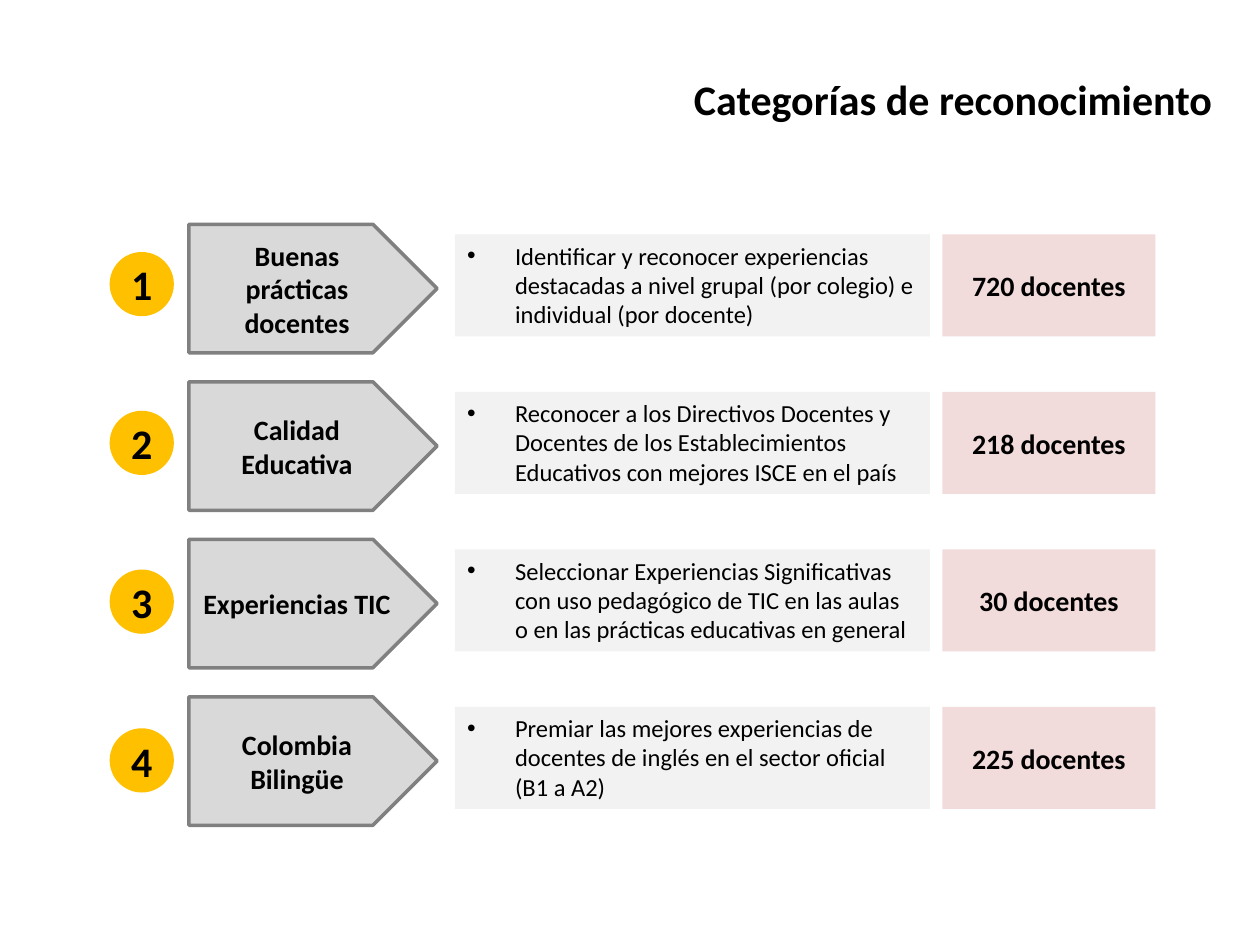
from dataclasses import dataclass
from typing import Optional

from lxml import etree
from pptx import Presentation
from pptx.dml.color import RGBColor
from pptx.enum.shapes import MSO_SHAPE
from pptx.enum.text import MSO_ANCHOR, MSO_AUTO_SIZE, PP_ALIGN
from pptx.oxml.ns import qn
from pptx.util import Emu, Pt

EMU_PER_PX = 9144  # 100 px to the inch
FONT = "Calibri"
TITLE_ONLY = 5
BULLET_INDENT = 38

ARROW, CIRCLE, RECTANGLE = MSO_SHAPE.PENTAGON, MSO_SHAPE.OVAL, MSO_SHAPE.RECTANGLE
CENTER, LEFT = PP_ALIGN.CENTER, PP_ALIGN.LEFT
TOP, MIDDLE = MSO_ANCHOR.TOP, MSO_ANCHOR.MIDDLE

COLORS = {
    "text": "000000",
    "arrow": "D9D9D9",
    "outline": "808080",
    "number": "FFC000",
    "goal": "F2F2F2",
    "count": "F2DCDB",
}


@dataclass(frozen=True)
class Category:
    name: str
    goal: str
    count: str


@dataclass(frozen=True)
class Column:
    """One kind of shape, repeated down the slide at an equal pitch."""
    shape_type: MSO_SHAPE
    left: int
    top: int
    width: int
    height: int
    pitch: int
    fill: str
    size: int
    bold: bool = True
    outline: Optional[str] = None
    bulleted: bool = False
    tight: bool = False


CATEGORIES = [
    Category("Buenas prácticas docentes",
             "Identificar y reconocer experiencias destacadas a nivel grupal "
             "(por colegio) e individual (por docente)",
             "720 docentes"),
    Category("Calidad Educativa",
             "Reconocer a los Directivos Docentes y Docentes de los "
             "Establecimientos Educativos con mejores ISCE en el país",
             "218 docentes"),
    Category("Experiencias TIC",
             "Seleccionar Experiencias Significativas con uso pedagógico de TIC "
             "en las aulas o en las prácticas educativas en general",
             "30 docentes"),
    Category("Colombia Bilingüe",
             "Premiar las mejores experiencias de docentes de inglés en el "
             "sector oficial (B1 a A2)",
             "225 docentes"),
]

NAME = Column(ARROW, 150, 178, 197, 102, 125, "arrow", 16, outline="outline")
NUMBER = Column(CIRCLE, 87, 200, 51, 51, 126, "number", 24, tight=True)
GOAL = Column(RECTANGLE, 361, 186, 377, 81, 125, "goal", 14, bold=False, bulleted=True)
COUNT = Column(RECTANGLE, 748, 186, 169, 81, 125, "count", 16)


def px(length: int) -> Emu:
    return Emu(length * EMU_PER_PX)


def color(name: str) -> RGBColor:
    return RGBColor.from_string(COLORS[name])


def add_bullet(para) -> None:
    properties = para._p.get_or_add_pPr()
    properties.set("marL", str(px(BULLET_INDENT)))
    properties.set("indent", str(-px(BULLET_INDENT)))
    etree.SubElement(properties, qn("a:buFont"), typeface="Arial")
    etree.SubElement(properties, qn("a:buChar"), char="•")


def write_text(frame, text: str, size: int, bold: bool, align, anchor,
               bulleted: bool = False) -> None:
    frame.word_wrap = True
    frame.vertical_anchor = anchor
    frame.text = text
    para = frame.paragraphs[0]
    para.alignment = align
    if bulleted:
        add_bullet(para)
    font = para.runs[0].font
    for attribute, value in {"name": FONT, "size": Pt(size), "bold": bold}.items():
        setattr(font, attribute, value)
    font.color.rgb = color("text")


def add_item(page, column: Column, row: int, text: str) -> None:
    box = page.shapes.add_shape(
        column.shape_type, px(column.left), px(column.top + row * column.pitch),
        px(column.width), px(column.height))
    box.shadow.inherit = False
    box.fill.solid()
    box.fill.fore_color.rgb = color(column.fill)
    if column.outline:
        box.line.color.rgb = color(column.outline)
        box.line.width = Pt(2)
    else:
        box.line.fill.background()
    frame = box.text_frame
    if column.tight:
        for side in ("left", "top", "right", "bottom"):
            setattr(frame, f"margin_{side}", 0)
    align, anchor = (LEFT, TOP) if column.bulleted else (CENTER, MIDDLE)
    write_text(frame, text, column.size, column.bold, align, anchor, column.bulleted)


def add_title(page, text: str) -> None:
    title = page.shapes.title
    place = {"left": 531, "top": 53, "width": 451, "height": 101}
    for attribute, length in place.items():
        setattr(title, attribute, px(length))
    write_text(title.text_frame, text, 24, True, CENTER, TOP)
    title.text_frame.auto_size = MSO_AUTO_SIZE.NONE


def main() -> None:
    deck = Presentation()
    deck.slide_width, deck.slide_height = px(1000), px(750)
    page = deck.slides.add_slide(deck.slide_layouts[TITLE_ONLY])
    add_title(page, "Categorías de reconocimiento")
    for row, category in enumerate(CATEGORIES):
        add_item(page, NAME, row, category.name)
        add_item(page, NUMBER, row, str(row + 1))
        add_item(page, GOAL, row, category.goal)
        add_item(page, COUNT, row, category.count)
    deck.save("out.pptx")


if __name__ == "__main__":
    main()
